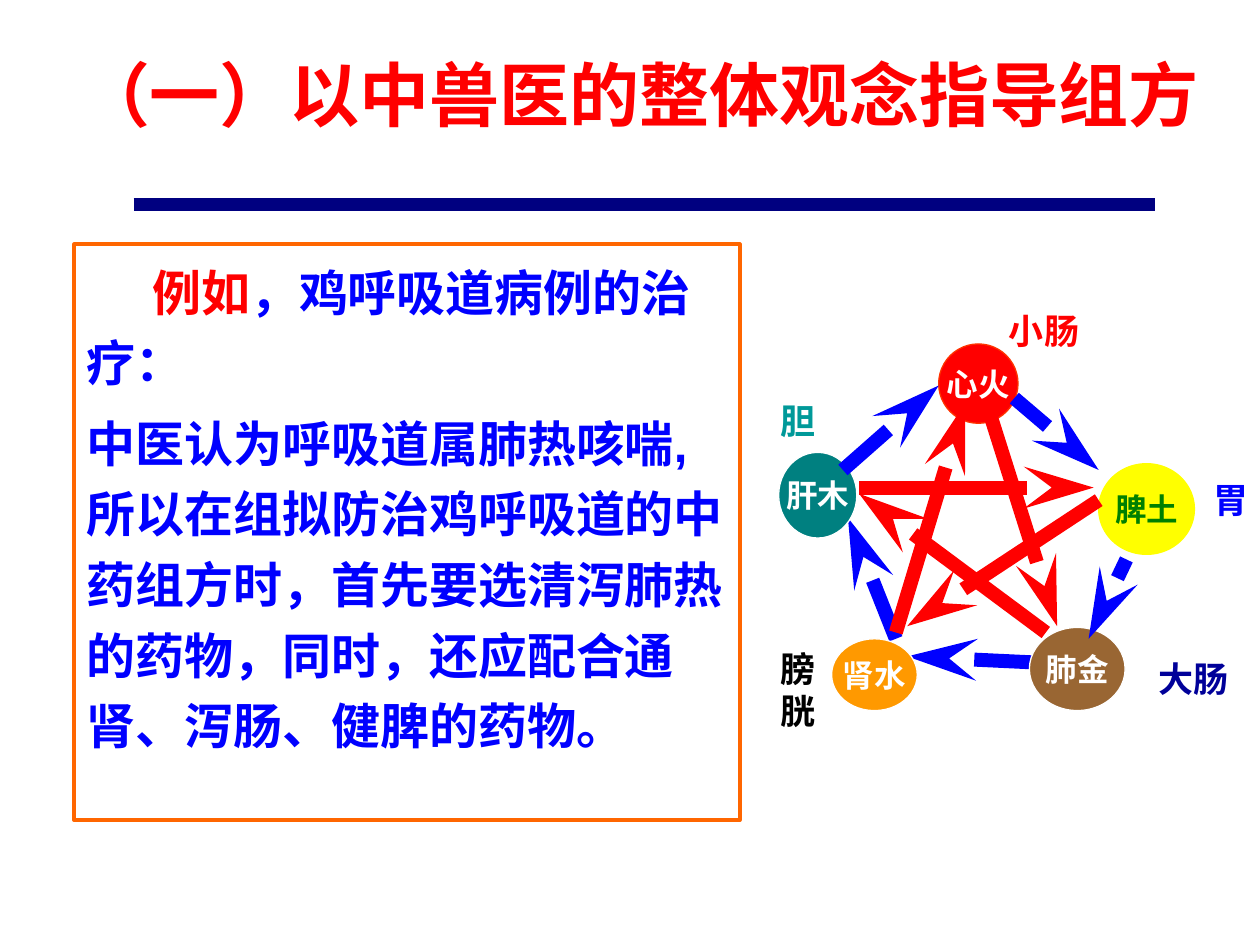
from lxml import etree
from pptx import Presentation
from pptx.dml.color import RGBColor
from pptx.enum import shapes, text
from pptx.oxml.ns import qn
from pptx.util import Inches, Pt

# Content
TITLE = "（一）以中兽医的整体观念指导组方"
EXAMPLE = [
    [("例如", "FF0000"), ("，鸡呼吸道病例的治疗：", "0000FF")],
    [("中医认为呼吸道属肺热咳喘,所以在组拟防治鸡呼吸道的中药组方时，"
      "首先要选清泻肺热的药物，同时，还应配合通肾、泻肠、健脾的药物。", "0000FF")],
]
ORGANS = [  # name, left, top, width, height, fill, line, font colour
    ("肾水", 6.6, 5.07, 0.68, 0.57, "FF9900", "FFFFFF", "FFFFFF"),
    ("肝木", 6.18, 3.59, 0.62, 0.68, "008080", "FFFFFF", "FFFFFF"),
    ("心火", 7.45, 2.73, 0.63, 0.63, "FF0000", "FF3300", "FFFFFF"),
    ("脾土", 8.72, 3.68, 0.76, 0.72, "FFFF00", "FFFF00", "008000"),
    ("肺金", 8.17, 4.98, 0.76, 0.66, "996633", "FFFFFF", "FFFFFF"),
]
LABELS = [  # name, left, top, width, height, colour
    ("胆", 6.1, 3.12, 0.47, 0.43, "009999"),
    ("小肠", 7.91, 2.41, 0.87, 0.43, "FF0000"),
    ("胃", 9.53, 3.75, 0.47, 0.43, "0000FF"),
    ("大肠", 9.1, 5.17, 0.9, 0.43, "000099"),
    ("膀胱", 6.1, 5.09, 0.47, 0.77, "000000"),
]
GENERATING, CONTROLLING = "0000FF", "FF0000"
ARROWS_BEHIND = [  # from x, y, to x, y, colour
    (8.26, 5.26, 7.2, 5.21, GENERATING),
    (7.11, 5.07, 6.73, 4.11, GENERATING),
]
ARROWS_FRONT = [
    (8.72, 3.97, 7.2, 4.97, CONTROLLING),
    (7.83, 3.2, 8.39, 4.97, CONTROLLING),
    (8.3, 5.02, 6.82, 3.92, CONTROLLING),
    (6.69, 3.73, 7.45, 3.06, GENERATING),
    (8.94, 4.44, 8.64, 5.07, GENERATING),
    (8.05, 3.16, 8.72, 3.73, GENERATING),
    (7.11, 5.02, 7.66, 3.2, CONTROLLING),
    (6.82, 3.87, 8.68, 3.87, CONTROLLING),
]
CJK = "Noto Sans CJK SC"


def rgb(value):
    return RGBColor.from_string(value)


def add_run(p, words, size, color, font=CJK):
    r = p.add_run()
    r.text = words
    r.font.size, r.font.bold, r.font.name = Pt(size), True, font
    r.font.color.rgb = rgb(color)
    etree.SubElement(r._r.get_or_add_rPr(), qn("a:ea"), typeface=CJK)


def add_shape(s, kind, box, line, width, fill=None):
    sp = s.shapes.add_shape(kind, *map(Inches, box))
    sp.shadow.inherit = False
    if fill:
        sp.fill.solid()
        sp.fill.fore_color.rgb = rgb(fill)
    else:
        sp.fill.background()
    sp.line.color.rgb, sp.line.width = rgb(line), Pt(width)
    return sp


def add_line(s, x1, y1, x2, y2, color, width=8, arrow=True):
    c = s.shapes.add_connector(shapes.MSO_CONNECTOR.STRAIGHT,
                               *map(Inches, (x1, y1, x2, y2)))
    c.line.color.rgb, c.line.width = rgb(color), Pt(width)
    if arrow:
        etree.SubElement(c.line._get_or_add_ln(), qn("a:tailEnd"),
                         type="stealth", w="med", len="lg")
    etree.SubElement(c._element.spPr, qn("a:effectLst"))


def add_organ(s, name, x, y, w, h, fill, line, color):
    sp = add_shape(s, shapes.MSO_SHAPE.OVAL, (x, y, w, h), line, 0.75, fill)
    tf = sp.text_frame
    tf.word_wrap, tf.vertical_anchor = False, text.MSO_ANCHOR.MIDDLE
    tf.paragraphs[0].alignment = text.PP_ALIGN.CENTER
    add_run(tf.paragraphs[0], name, 18, color, "Times New Roman")


def add_label(s, name, x, y, w, h, color):
    tf = s.shapes.add_textbox(*map(Inches, (x, y, w, h))).text_frame
    tf.word_wrap = True
    add_run(tf.paragraphs[0], name, 20, color)


def add_title(s):
    sp = s.shapes.title
    sp.left, sp.top, sp.width, sp.height = map(Inches, (0.43, 0.44, 9.29, 0.71))
    tf = sp.text_frame
    tf.vertical_anchor = text.MSO_ANCHOR.MIDDLE
    p = tf.paragraphs[0]
    p.alignment, p.line_spacing = text.PP_ALIGN.CENTER, 0.85
    add_run(p, TITLE, 40, "FF0000", "Arial Narrow")


def add_example(s):
    sp = add_shape(s, shapes.MSO_SHAPE.RECTANGLE, (0.59, 1.94, 5.28, 4.57),
                   "FF6600", 2.25)
    tf = sp.text_frame
    tf.word_wrap, tf.vertical_anchor = True, text.MSO_ANCHOR.TOP
    for i, runs in enumerate(EXAMPLE):
        p = tf.add_paragraph() if i else tf.paragraphs[0]
        p.alignment = text.PP_ALIGN.LEFT
        p.line_spacing, p.space_before = 1.2, Pt(5.6)
        pPr = p._p.get_or_add_pPr()
        pPr.set("hangingPunct", "0")  # keep punctuation inside the box
        if i == 0:  # first-line indent
            pPr.set("indent", str(Inches(0.52)))
        for words, color in runs:
            add_run(p, words, 28, color, "Arial")


def main():
    prs = Presentation()
    prs.slide_width, prs.slide_height = Inches(10), Inches(7.5)
    s = prs.slides.add_slide(prs.slide_layouts[5])

    # Title, example and rule
    add_title(s)
    add_example(s)
    add_line(s, 1.06, 1.62, 9.17, 1.62, "000080", width=7.5, arrow=False)

    # Five-element diagram
    for arrow in ARROWS_BEHIND:
        add_line(s, *arrow)
    for organ in ORGANS:
        add_organ(s, *organ)
    for arrow in ARROWS_FRONT:
        add_line(s, *arrow)
    for label in LABELS:
        add_label(s, *label)

    prs.save("out.pptx")


if __name__ == "__main__":
    main()
